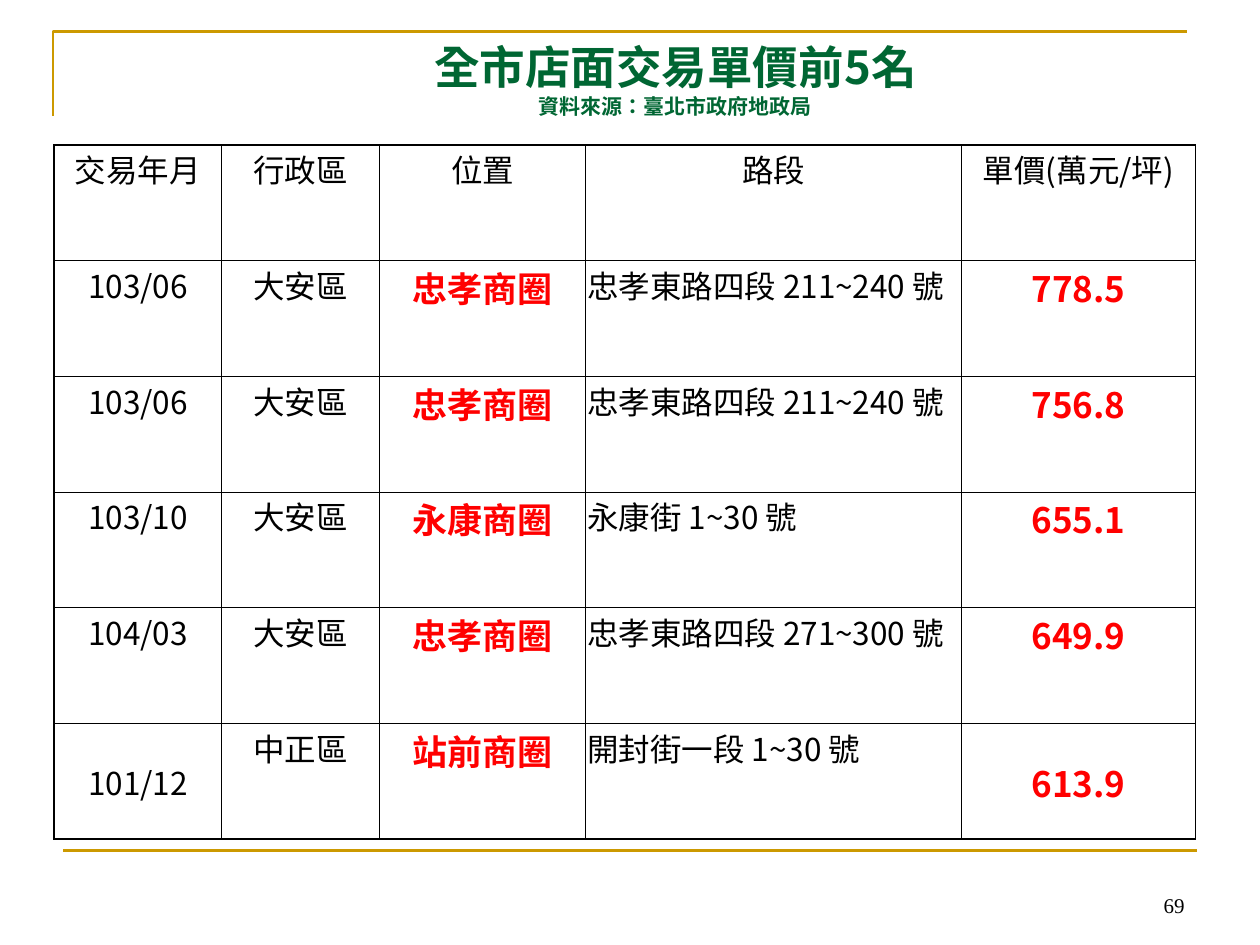
from lxml.etree import SubElement
from pptx import Presentation
from pptx.dml.color import RGBColor
from pptx.enum.text import MSO_ANCHOR, PP_ALIGN
from pptx.oxml.ns import qn
from pptx.util import Inches, Pt

FONT = "Noto Sans CJK SC"
GOLD, GREEN, RED, BLACK, WHITE = "CC9900", "006633", "FF0000", "000000", "FFFFFF"


def color(hex_value):
    return RGBColor.from_string(hex_value)


def add_span(para, text, size, hex_value, bold=False, font=FONT):
    span = para.add_run()
    span.text = text
    span.font.size, span.font.bold, span.font.name = Pt(size), bold, font
    span.font.color.rgb = color(hex_value)
    span.font._element.set("lang", "zh-TW")
    SubElement(span.font._element, qn("a:ea")).set("typeface", font)


deck = Presentation()
deck.slide_width, deck.slide_height = Inches(10), Inches(7.5)
page = deck.slides.add_slide(deck.slide_layouts[5])
shapes = page.shapes

# Gold frame: a corner at the top left and a rule at the bottom
outline = shapes.build_freeform(Inches(0.42), Inches(0.92))
outline.add_line_segments([(Inches(0.42), Inches(0.25)), (Inches(9.42), Inches(0.25))], close=False)
corner = outline.convert_to_shape()
corner.shadow.inherit = False
corner.fill.background()
rule = shapes.add_connector(1, Inches(0.5), Inches(6.75), Inches(9.5), Inches(6.75))
SubElement(rule._element.spPr, qn("a:effectLst"))
for edge in (corner, rule):
    edge.line.color.rgb = color(GOLD)
    edge.line.width = Pt(1.5)

# Title with its source line
title = shapes.title
title.left, title.top, title.width, title.height = Inches(1.22), Inches(0.3), Inches(8.28), Inches(0.93)
title.text_frame.vertical_anchor = MSO_ANCHOR.TOP
title.text_frame.margin_top = Inches(0.01)
para = title.text_frame.paragraphs[0]
para.alignment = PP_ALIGN.CENTER
para.line_spacing = 1.0
add_span(para, "全市店面交易單價前5名", 26, GREEN, bold=True)
para.add_line_break()
add_span(para, "資料來源：臺北市政府地政局", 12, GREEN, bold=True)

# Page number
number_box = shapes.add_textbox(Inches(7.17), Inches(6.83), Inches(2.33), Inches(0.5))
number_box.text_frame.word_wrap = True
number_box.text_frame.vertical_anchor = MSO_ANCHOR.BOTTOM
para = number_box.text_frame.paragraphs[0]
para.alignment = PP_ALIGN.RIGHT
add_span(para, "69", 12, BLACK, font="Times New Roman")

# Price table
records = [
    ("交易年月", "行政區", "位置", "路段", "單價(萬元/坪)"),
    ("103/06", "大安區", "忠孝商圈", "忠孝東路四段 211~240 號", "778.5"),
    ("103/06", "大安區", "忠孝商圈", "忠孝東路四段 211~240 號", "756.8"),
    ("103/10", "大安區", "永康商圈", "永康街 1~30 號", "655.1"),
    ("104/03", "大安區", "忠孝商圈", "忠孝東路四段 271~300 號", "649.9"),
    ("101/12", "中正區", "站前商圈", "開封街一段 1~30 號", "613.9"),
]
column_widths = [1.33, 1.25, 1.64, 2.98, 1.86]
last_row, last_column = len(records) - 1, len(column_widths) - 1
MONTH, DISTRICT, AREA, ROAD, PRICE = range(len(column_widths))

table = shapes.add_table(len(records), len(column_widths), Inches(0.43), Inches(1.15),
                         Inches(sum(column_widths)), Inches(5.51)).table
for column, width in zip(table.columns, column_widths):
    column.width = Inches(width)

for r, record in enumerate(records):
    for c, text in enumerate(record):
        cell = table.cell(r, c)
        cell.margin_left = cell.margin_right = cell.margin_top = Inches(0.01)
        cell.margin_bottom = 0
        centered_down = r == last_row and c in (MONTH, PRICE)
        cell.vertical_anchor = MSO_ANCHOR.MIDDLE if centered_down else MSO_ANCHOR.TOP

        para = cell.text_frame.paragraphs[0]
        para.alignment = PP_ALIGN.LEFT if r > 0 and c == ROAD else PP_ALIGN.CENTER
        if r > 0 and c in (AREA, PRICE):
            add_span(para, text, 20, RED, bold=True)
        else:
            add_span(para, text, 18, BLACK)

        # Outer edges are twice as thick; borders must precede the fill
        outer_edges = {"a:lnL": c == 0, "a:lnR": c == last_column,
                       "a:lnT": r == 0, "a:lnB": r == last_row}
        properties = cell._tc.get_or_add_tcPr()
        for tag, is_outer in outer_edges.items():
            border = SubElement(properties, qn(tag), w=str(Pt(1 if is_outer else 0.5)))
            SubElement(SubElement(border, qn("a:solidFill")), qn("a:srgbClr"), val=BLACK)
        if r == 0:
            cell.fill.solid()
            cell.fill.fore_color.rgb = color(WHITE)
        else:
            cell.fill.background()

deck.save("out.pptx")
